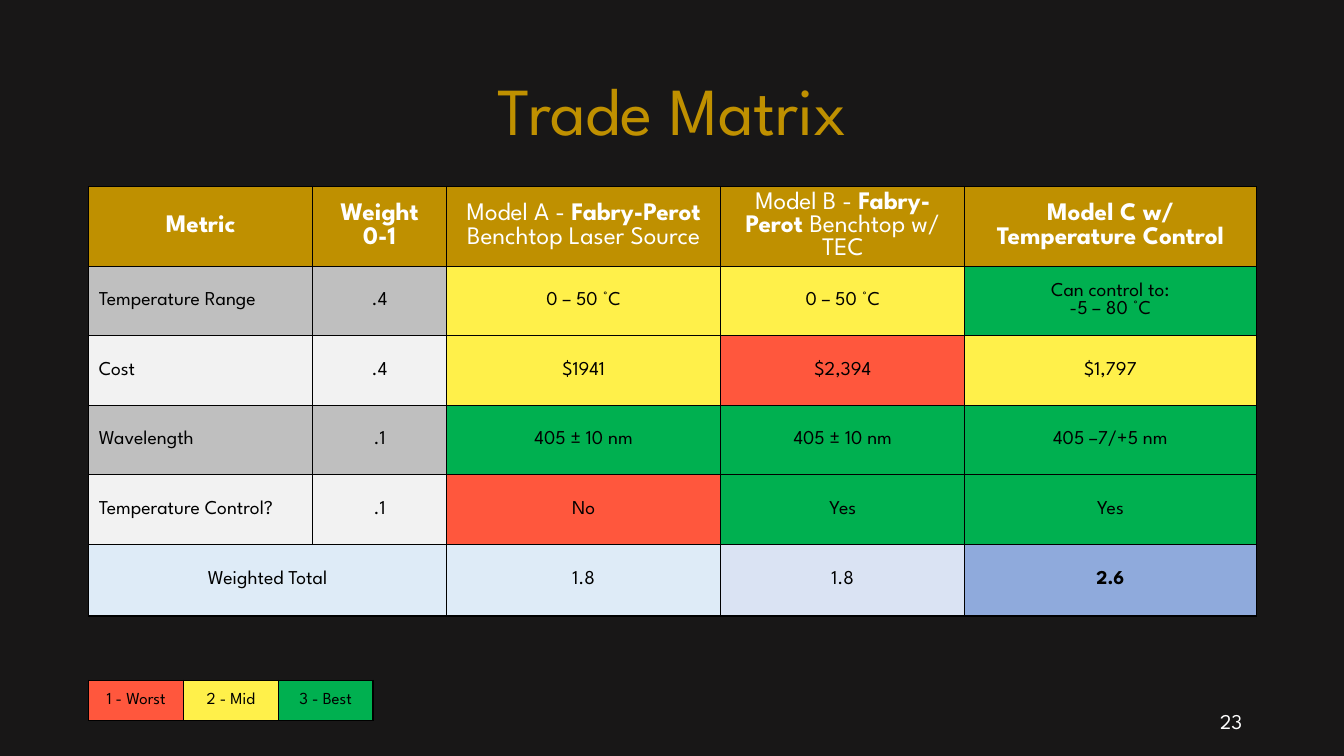
from lxml import etree
from pptx import Presentation
from pptx import util as u
from pptx.dml.color import RGBColor
from pptx.enum import text
from pptx.oxml import ns

COLORS = {
    "background": "181717", "gold": "BF9000", "white": "FFFFFF", "black": "000000",
    "gray": "BFBFBF", "light": "F2F2F2", "worst": "FF573D", "mid": "FFF04A",
    "best": "00B050", "total": "DEEBF7", "total_alt": "DAE3F3", "winner": "8FAADC",
}
FONT = "League Spartan"
ALIGN = text.PP_ALIGN
TITLE = {"size": u.Pt(48), "color": "gold"}
HEADER = {"size": u.Pt(18), "color": "white"}
BODY = {"size": u.Pt(14), "color": "black"}
LEGEND = {"size": u.Pt(12), "color": "black"}
PAGE = {"size": u.Pt(15), "color": "white"}

MATRIX_COLUMNS = [2.22, 1.33, 2.72, 2.42, 2.89]
MATRIX_ROWS = [0.69] * 5 + [0.71]
MATRIX = [
    [("**Metric**", "gold"), ("**Weight**\n**0-1**", "gold"),
     ("Model A - **Fabry-Perot **Benchtop Laser Source", "gold"),
     ("Model B - **Fabry-Perot **Benchtop w/ TEC", "gold"),
     ("**Model C w/ Temperature Control**", "gold")],
    [("Temperature Range", "gray"), (".4", "gray"), ("0 – 50 °C", "mid"),
     ("0 – 50 °C", "mid"), ("Can control to:\n-5 – 80 °C", "best")],
    [("Cost", "light"), (".4", "light"), ("$1941", "mid"),
     ("$2,394", "worst"), ("$1,797", "mid")],
    [("Wavelength", "gray"), (".1", "gray"), ("405 ± 10 nm", "best"),
     ("405 ± 10 nm", "best"), ("405 –7/+5 nm", "best")],
    [("Temperature Control?", "light"), (".1", "light"), ("No", "worst"),
     ("Yes", "best"), ("Yes", "best")],
    [("Weighted Total", "total"), ("", "total"), ("1.8", "total"),
     ("1.8", "total_alt"), ("**2.6**", "winner")],
]
SCALE = [[("1 - Worst", "worst"), ("2 - Mid", "mid"), ("3 - Best", "best")]]


def rgb(name):
    return RGBColor.from_string(COLORS[name])


def write(frame, content, style, align):
    for number, line in enumerate(content.split("\n")):
        paragraph = frame.paragraphs[0] if number == 0 else frame.add_paragraph()
        paragraph.alignment = align
        for part, words in enumerate(line.split("**")):
            if not words:
                continue
            run = paragraph.add_run()
            run.text = words
            formats = {"name": FONT, "size": style["size"], "bold": part % 2 == 1}
            for key, value in formats.items():
                setattr(run.font, key, value)
            run.font.color.rgb = rgb(style["color"])


def add_borders(cell):
    properties = cell._tc.get_or_add_tcPr()
    for position, side in enumerate(("lnL", "lnR", "lnT", "lnB")):
        border = etree.Element(ns.qn(f"a:{side}"), w=str(u.Pt(1)))
        fill = etree.SubElement(border, ns.qn("a:solidFill"))
        etree.SubElement(fill, ns.qn("a:srgbClr"), val=COLORS["black"])
        properties.insert(position, border)


def add_grid(slide, left, top, columns, rows, cells, style_for):
    table = slide.shapes.add_table(
        len(rows), len(columns), u.Inches(left), u.Inches(top),
        u.Inches(sum(columns)), u.Inches(sum(rows))).table
    for key in ("first_row", "horz_banding"):
        setattr(table, key, False)
    for column, width in zip(table.columns, columns):
        column.width = u.Inches(width)
    for row, height in zip(table.rows, rows):
        row.height = u.Inches(height)
    for r, entries in enumerate(cells):
        for c, (content, color) in enumerate(entries):
            cell = table.cell(r, c)
            cell.vertical_anchor = text.MSO_ANCHOR.MIDDLE
            cell.fill.solid()
            cell.fill.fore_color.rgb = rgb(color)
            add_borders(cell)
            write(cell.text_frame, content, *style_for(r, c))
    return table


def matrix_style(row, column):
    is_metric = column == 0 and 0 < row < len(MATRIX) - 1
    return HEADER if row == 0 else BODY, ALIGN.LEFT if is_metric else ALIGN.CENTER


def legend_style(row, column):
    return LEGEND, ALIGN.CENTER


def place_text(shape, box, content, style, align):
    for key, value in zip(("left", "top", "width", "height"), box):
        setattr(shape, key, u.Inches(value))
    frame = shape.text_frame
    formats = {"word_wrap": True, "auto_size": text.MSO_AUTO_SIZE.NONE,
               "vertical_anchor": text.MSO_ANCHOR.MIDDLE}
    for key, value in formats.items():
        setattr(frame, key, value)
    write(frame, content, style, align)


def add_title(slide, box):
    title = slide.shapes.title
    place_text(title, box, "Trade Matrix", TITLE, ALIGN.CENTER)
    title.text_frame.paragraphs[0].line_spacing = 0.9


def add_matrix(slide, left, top):
    matrix = add_grid(slide, left, top, MATRIX_COLUMNS, MATRIX_ROWS, MATRIX, matrix_style)
    matrix.cell(5, 0).merge(matrix.cell(5, 1))


def add_legend(slide, left, top):
    add_grid(slide, left, top, [0.94] * 3, [0.4], SCALE, legend_style)


def add_page_number(slide, box):
    number = slide.shapes.add_textbox(0, 0, 0, 0)
    place_text(number, box, "23", PAGE, ALIGN.RIGHT)


def main():
    deck = Presentation()
    deck.slide_width, deck.slide_height = u.Inches(13.33), u.Inches(7.5)
    slide = deck.slides.add_slide(deck.slide_layouts.get_by_name("Title Only"))
    slide.background.fill.solid()
    slide.background.fill.fore_color.rgb = rgb("background")
    add_title(slide, (0.92, 0.4, 11.5, 1.45))
    add_matrix(slide, 0.88, 1.85)
    add_page_number(slide, (9.42, 6.95, 3, 0.4))
    add_legend(slide, 0.88, 6.75)
    deck.save("out.pptx")


if __name__ == "__main__":
    main()
